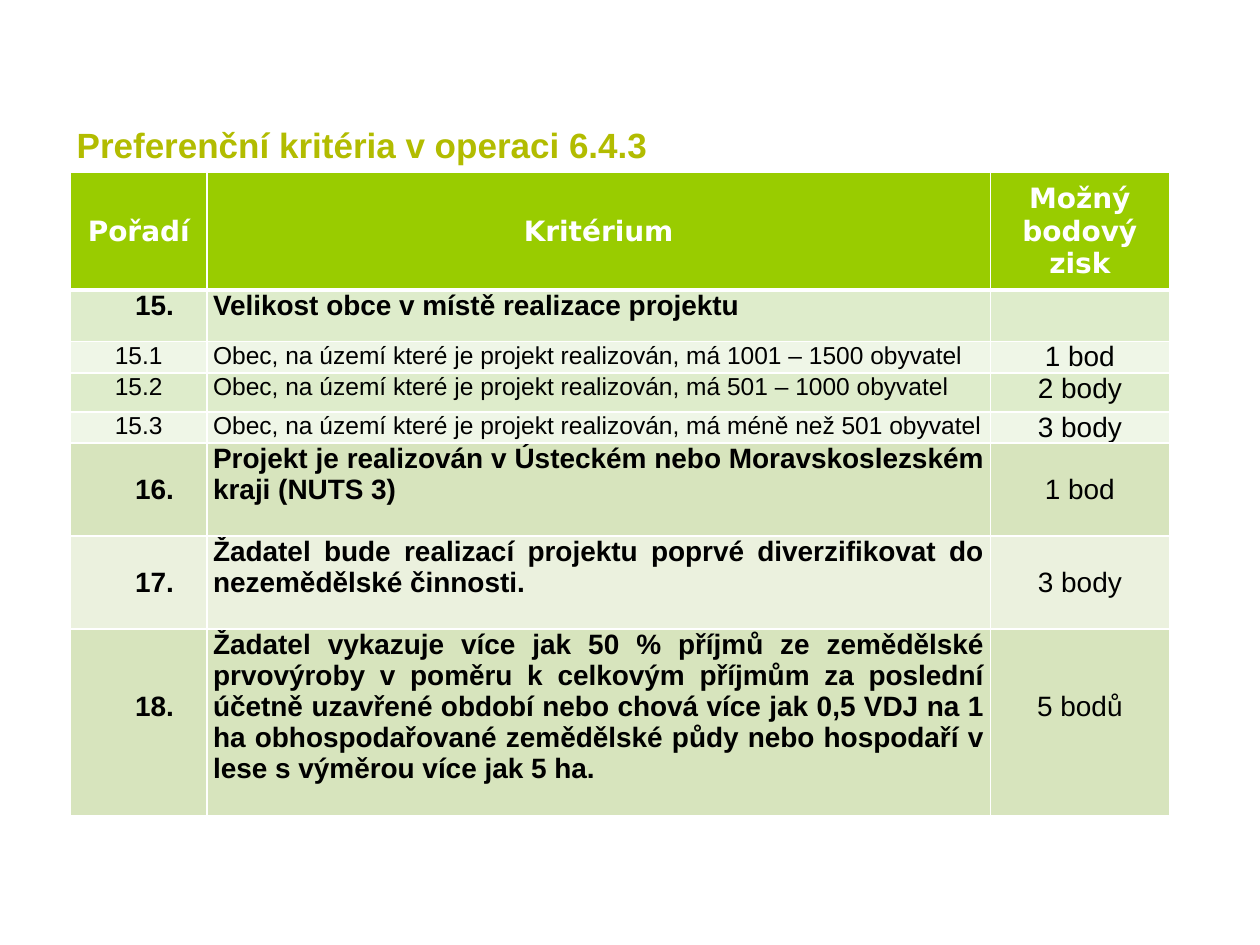
from dataclasses import dataclass

from lxml.etree import SubElement
from pptx import Presentation
from pptx.dml.color import RGBColor
from pptx.enum.text import MSO_ANCHOR as Anchor, PP_ALIGN as Align
from pptx.oxml.ns import qn
from pptx.util import Pt

COLORS = {
    "title": "B2BC00",
    "header": "99CC00",
    "green": "DEECCB",
    "pale green": "EFF6E7",
    "olive": "D7E4BD",
    "pale olive": "EBF1DE",
    "white": "FFFFFF",
    "black": "000000",
}
COLUMN_WIDTHS = (77.8, 447.8, 102.2)
HEADINGS = ("Pořadí", "Kritérium", "Možný bodový zisk")
HEADER_HEIGHT = 67
LINE_HEIGHT = 17.75
THIN, THICK = 0.91, 2.95


@dataclass
class Criterion:
    number: str
    text: str
    points: str
    fill: str
    height: float
    main: bool = True
    lines_above: int = 0


CRITERIA = [
    Criterion("15.", "Velikost obce v místě realizace projektu", "", "green", 29.6),
    Criterion("15.1", "Obec, na území které je projekt realizován, má 1001 – 1500 obyvatel",
              "1 bod", "pale green", 17.5, main=False),
    Criterion("15.2", "Obec, na území které je projekt realizován, má 501 – 1000 obyvatel",
              "2 body", "green", 22.3, main=False),
    Criterion("15.3", "Obec, na území které je projekt realizován, má méně než 501 obyvatel",
              "3 body", "pale green", 17.5, main=False),
    Criterion("16.", "Projekt je realizován v Ústeckém nebo Moravskoslezském kraji (NUTS 3)",
              "1 bod", "olive", 53.2, lines_above=1),
    Criterion("17.", "Žadatel bude realizací projektu poprvé diverzifikovat do "
              "nezemědělské činnosti.", "3 body", "pale olive", 53.2, lines_above=1),
    Criterion("18.", "Žadatel vykazuje více jak 50 % příjmů ze zemědělské prvovýroby "
              "v poměru k celkovým příjmům za poslední účetně uzavřené období nebo chová "
              "více jak 0,5 VDJ na 1 ha obhospodařované zemědělské půdy nebo hospodaří "
              "v lese s výměrou více jak 5 ha.", "5 bodů", "olive", 106.5, lines_above=2),
]


def set_attributes(target, **values) -> None:
    for name, value in values.items():
        setattr(target, name, value)


def color(name: str) -> RGBColor:
    return RGBColor.from_string(COLORS[name])


def write(frame, text: str, size: float, bold: bool, ink: str,
          font: str = "Arial", **para_format) -> None:
    para = frame.paragraphs[0]
    set_attributes(para, **para_format)
    span = para.add_run()
    span.text = text
    set_attributes(span.font, name=font, size=Pt(size), bold=bold)
    span.font.color.rgb = color(ink)


def style_cell(cell, fill: str, top: float, bottom: float, **cell_format) -> None:
    """Give a cell white borders, a fill and its margins; top and bottom are line widths."""
    properties = cell._tc.get_or_add_tcPr()
    for side, width in (("L", THIN), ("R", THIN), ("T", top), ("B", bottom)):
        line = SubElement(properties, qn(f"a:ln{side}"), w=str(int(Pt(width))))
        paint = SubElement(line, qn("a:solidFill"))
        SubElement(paint, qn("a:srgbClr"), val=COLORS["white"])
    cell.fill.solid()
    cell.fill.fore_color.rgb = color(fill)
    set_attributes(cell, **cell_format)


def fill_header(table) -> None:
    table.rows[0].height = Pt(HEADER_HEIGHT)
    for cell, heading in zip(table.rows[0].cells, HEADINGS):
        style_cell(cell, "header", THIN, THICK, vertical_anchor=Anchor.MIDDLE)
        write(cell.text_frame, heading, 16, True, "white", "DejaVu Sans",
              alignment=Align.CENTER, line_spacing=1.01)


def fill_criterion(row, item: Criterion, top: float) -> None:
    row.height = Pt(item.height)
    size = 16 if item.main else 14
    drop = item.lines_above * LINE_HEIGHT
    indent = 18 if item.main else 0
    columns = (
        (item.number, size, item.main, Align.CENTER, drop, indent),
        (item.text, size, item.main, Align.JUSTIFY, 0, 0),
        (item.points, 16, False, Align.CENTER, drop, 0),
    )
    for cell, (text, points, bold, align, above, left) in zip(row.cells, columns):
        style_cell(cell, item.fill, top, THIN, vertical_anchor=Anchor.TOP,
                   margin_left=Pt(3.6 + left), margin_right=Pt(3.6),
                   margin_top=Pt(above), margin_bottom=Pt(0))
        if text:
            write(cell.text_frame, text, points, bold, "black", alignment=align)


def add_criteria_table(page) -> None:
    height = HEADER_HEIGHT + sum(item.height for item in CRITERIA)
    table = page.shapes.add_table(len(CRITERIA) + 1, len(COLUMN_WIDTHS), Pt(40.4), Pt(98.7),
                                  Pt(sum(COLUMN_WIDTHS)), Pt(height)).table
    for column, width in zip(table.columns, COLUMN_WIDTHS):
        column.width = Pt(width)
    fill_header(table)
    for index, item in enumerate(CRITERIA, start=1):
        fill_criterion(table.rows[index], item, THICK if index == 1 else THIN)


def add_title(page) -> None:
    box = page.shapes.add_textbox(Pt(36.7), Pt(37.4), Pt(635), Pt(60.5))
    set_attributes(box.text_frame, word_wrap=True, vertical_anchor=Anchor.BOTTOM)
    write(box.text_frame, "Preferenční kritéria v operaci 6.4.3", 20, True, "title")


def main() -> None:
    deck = Presentation()
    set_attributes(deck, slide_width=Pt(720), slide_height=Pt(540))
    page = deck.slides.add_slide(deck.slide_layouts[6])
    add_criteria_table(page)
    add_title(page)
    deck.save("out.pptx")


if __name__ == "__main__":
    main()
